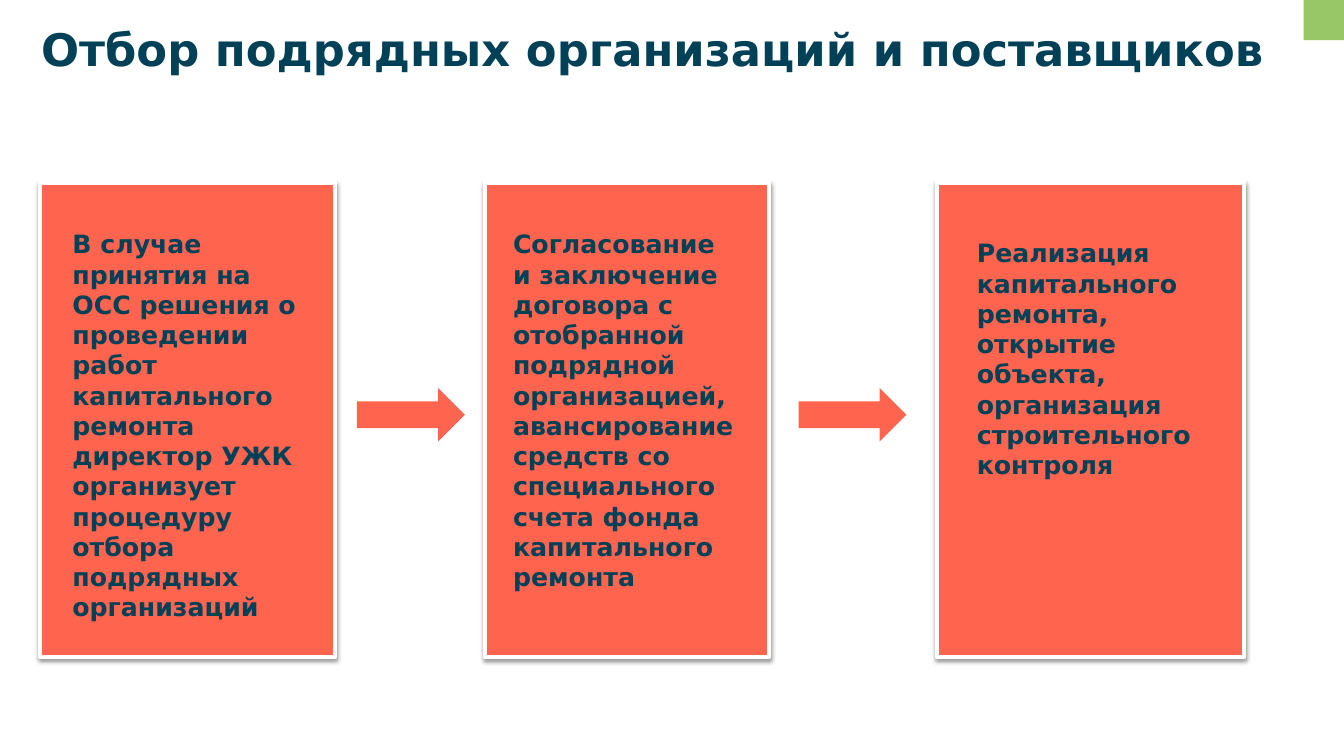
from dataclasses import dataclass

from lxml import etree
from pptx import Presentation
from pptx.dml.color import RGBColor
from pptx.enum.shapes import MSO_SHAPE
from pptx.enum.text import MSO_ANCHOR, MSO_AUTO_SIZE, PP_ALIGN
from pptx.oxml.ns import qn
from pptx.util import Emu, Inches, Pt

RECT, ARROW = MSO_SHAPE.RECTANGLE, MSO_SHAPE.RIGHT_ARROW
LEFT, CENTER = PP_ALIGN.LEFT, PP_ALIGN.CENTER
TOP, GROW = MSO_ANCHOR.TOP, MSO_AUTO_SIZE.SHAPE_TO_FIT_TEXT

COLORS = {"ink": "004158", "card": "FF644E", "edge": "FFFFFF",
          "tab": "97C766", "shade": "000000"}
FONT = "DejaVu Sans"
CELL = Inches(0.1)  # square grid cell: 133.3 columns by 75 rows
COLS, ROWS = 133.3, 75
CARD_TOP, CARD_ROWS = 18.1, 47.1
ARROW_COLS, ARROW_ROWS = 10.7, 5.3


@dataclass
class Box:
    col: float
    row: float
    cols: float
    rows: float

    def emu(self) -> list[Emu]:
        return [Emu(round(n * CELL)) for n in (self.col, self.row, self.cols, self.rows)]


@dataclass
class Step:
    col: float
    cols: float
    text: Box
    paras: list[str]


STEPS = [
    Step(4, 29.2, Box(6.2, 22.2, 24.6, 40.4), [
        "В случае принятия на ОСС решения о проведении работ капитального",
        "ремонта директор УЖК организует процедуру отбора подрядных организаций"]),
    Step(48.1, 28.2, Box(49.9, 22.2, 24.6, 37.4), [
        "Согласование и заключение договора с отобранной подрядной организацией, "
        "авансирование средств со специального счета фонда капитального ремонта"]),
    Step(92.9, 30.5, Box(95.9, 23.1, 24.5, 25.2), [
        "Реализация капитального ремонта, открытие объекта, "
        "организация строительного контроля"]),
]
ARROW_STARTS = [35.4, 79.2]


def tint(name: str) -> RGBColor:
    return RGBColor.from_string(COLORS[name])


def draw(slide, kind, box: Box, fill: str):
    shape = slide.shapes.add_shape(kind, *box.emu())
    shape.shadow.inherit = False
    shape.fill.solid()
    shape.fill.fore_color.rgb = tint(fill)
    shape.line.fill.background()
    return shape


def shade(shape) -> None:
    """Add a soft shadow falling straight down."""
    effects = shape._element.spPr.find(qn("a:effectLst"))
    outer = etree.SubElement(effects, qn("a:outerShdw"), blurRad=str(Pt(3.1)),
                             dist=str(Pt(1.6)), dir="5400000", rotWithShape="0")
    color = etree.SubElement(outer, qn("a:srgbClr"), val=COLORS["shade"])
    etree.SubElement(color, qn("a:alpha"), val="38000")


def write(slide, box: Box, paras: list[str], size: int, align=LEFT):
    frame = slide.shapes.add_textbox(*box.emu()).text_frame
    frame.word_wrap = True
    frame.vertical_anchor = TOP
    for i, text in enumerate(paras):
        para = frame.add_paragraph() if i else frame.paragraphs[0]
        para.alignment = align
        run = para.add_run()
        run.text = text
        run.font.name = FONT
        run.font.size = Pt(size)
        run.font.bold = True
        run.font.color.rgb = tint("ink")
    return frame


def add_step(slide, step: Step) -> None:
    card = draw(slide, RECT, Box(step.col, CARD_TOP, step.cols, CARD_ROWS), "card")
    card.line.color.rgb = tint("edge")
    card.line.width = Pt(3)
    shade(card)
    write(slide, step.text, step.paras, 18).auto_size = GROW


def main() -> None:
    deck = Presentation()
    deck.slide_width, deck.slide_height = round(COLS * CELL), ROWS * CELL
    slide = deck.slides.add_slide(deck.slide_layouts[6])

    draw(slide, RECT, Box(COLS - 4, 0, 4, 4), "tab")
    title = write(slide, Box(1.4, 1.4, 126.7, 12.8),
                  ["Отбор подрядных организаций и поставщиков"], 32, CENTER)
    title.margin_left = title.margin_right = Inches(0.08)
    title.margin_top = title.margin_bottom = Inches(0.08)

    for step in STEPS:
        add_step(slide, step)
    middle = CARD_TOP + CARD_ROWS / 2
    for col in ARROW_STARTS:
        draw(slide, ARROW, Box(col, middle - ARROW_ROWS / 2 - 0.5, ARROW_COLS, ARROW_ROWS), "card")

    deck.save("out.pptx")


if __name__ == "__main__":
    main()
